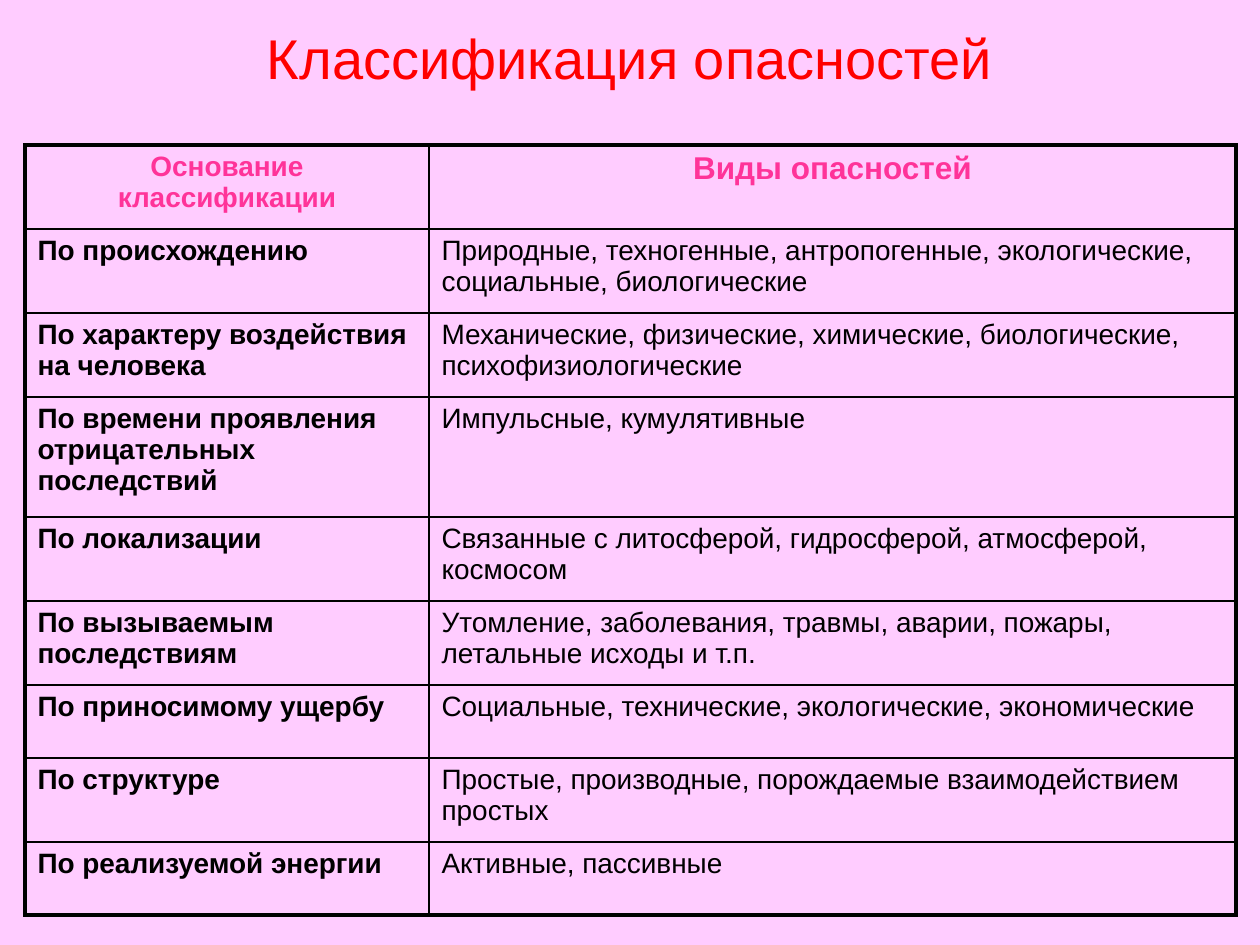
from lxml.etree import SubElement as Sub
from pptx import Presentation as Deck
from pptx.dml.color import RGBColor as Rgb
from pptx.enum.text import MSO_ANCHOR as Anchor, PP_ALIGN as Align
from pptx.oxml.ns import qn
from pptx.util import Emu, Pt

SCALE = 914400 / 126
INK = {"back": "FFCCFF", "title": "FF0000", "head": "FF3399", "text": "000000"}
COLS = [404, 807]
HIGH = [84, 84, 84, 120, 84, 84, 73, 84, 73]
ROWS = [
    ("Основание классификации", "Виды опасностей"),
    ("По происхождению",
     "Природные, техногенные, антропогенные, экологические, "
     "социальные, биологические"),
    ("По характеру воздействия на человека",
     "Механические, физические, химические, биологические, "
     "психофизиологические"),
    ("По времени проявления отрицательных последствий",
     "Импульсные, кумулятивные"),
    ("По локализации",
     "Связанные с литосферой, гидросферой, атмосферой, космосом"),
    ("По вызываемым последствиям",
     "Утомление, заболевания, травмы, аварии, пожары, "
     "летальные исходы и т.п."),
    ("По приносимому ущербу",
     "Социальные, технические, экологические, экономические"),
    ("По структуре",
     "Простые, производные, порождаемые взаимодействием простых"),
    ("По реализуемой энергии", "Активные, пассивные"),
]


def px(n):
    return Emu(round(n * SCALE))


def write(frame, text, ink, align, **form):
    """Put one formatted paragraph into a text frame."""
    para = frame.paragraphs[0]
    para.alignment = align
    run = para.add_run()
    run.text = text
    for name, val in {"name": "Arial", **form}.items():
        setattr(run.font, name, val)
    run.font.color.rgb = Rgb.from_string(INK[ink])
    return para


def space(para, part):
    """Set the space before a paragraph as a percentage."""
    gap = Sub(para._p.get_or_add_pPr(), qn("a:spcBef"))
    Sub(gap, qn("a:spcPct"), val=str(part * 1000))


def edge(cell, side, width):
    line = Sub(cell._tc.get_or_add_tcPr(), qn(f"a:ln{side}"), w=str(Pt(width)))
    fill = Sub(line, qn("a:solidFill"))
    Sub(fill, qn("a:srgbClr"), val=INK["text"])


def title(slide):
    box = slide.shapes.title
    box.left, box.top, box.width, box.height = map(px, (0, 0, 1260, 115))
    box.text_frame.vertical_anchor = Anchor.MIDDLE
    write(box.text_frame, "Классификация опасностей", "title", Align.CENTER,
          size=Pt(32), bold=False)


def grid(slide):
    frame = slide.shapes.add_table(len(ROWS), len(COLS), px(25), px(145),
                                   px(sum(COLS)), px(sum(HIGH)))
    table = frame.table
    table.first_row = table.horz_banding = False
    for col, wide in zip(table.columns, COLS):
        col.width = px(wide)
    for row, high in zip(table.rows, HIGH):
        row.height = px(high)
    for r, row in enumerate(ROWS):
        for c, text in enumerate(row):
            cell = table.cell(r, c)
            # Thick lines run round the outside only
            outer = {"L": c == 0, "R": c == len(COLS) - 1,
                     "T": r == 0, "B": r == len(ROWS) - 1}
            for side, thick in outer.items():
                edge(cell, side, 2.25 if thick else 1)
            cell.fill.background()
            head = r == 0
            para = write(cell.text_frame, text, "head" if head else "text",
                         Align.CENTER if head else Align.LEFT,
                         size=Pt(18 if head and c else 16),
                         bold=head or c == 0)
            space(para, 20)


def main():
    deck = Deck()
    deck.slide_width, deck.slide_height = px(1260), px(945)
    slide = deck.slides.add_slide(deck.slide_layouts[5])
    back = slide.background.fill
    back.solid()
    back.fore_color.rgb = Rgb.from_string(INK["back"])
    title(slide)
    grid(slide)
    deck.save("out.pptx")


if __name__ == "__main__":
    main()
